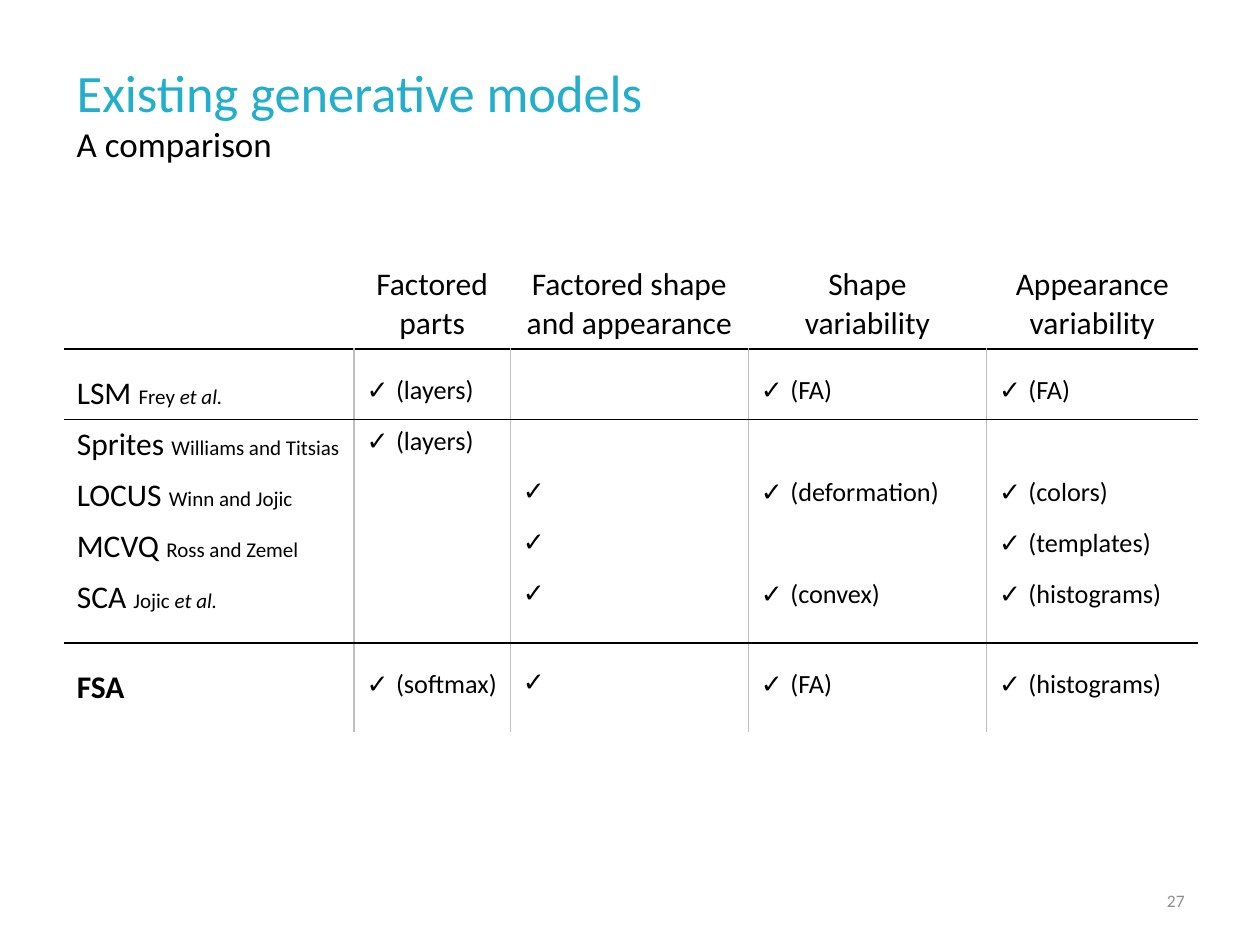
from lxml import etree
from pptx import Presentation
from pptx.dml.color import RGBColor
from pptx.enum import text as t
from pptx.oxml import ns
from pptx.util import Inches, Pt

TEAL = RGBColor(0x23, 0xAF, 0xCB)
BLACK = RGBColor(0, 0, 0)
GREY = RGBColor(0x8C, 0x8C, 0x8C)
RULE_GREY = RGBColor(0xBF, 0xBF, 0xBF)
WHITE = RGBColor(0xFF, 0xFF, 0xFF)

COLUMN_WIDTHS = [2.3, 1.24, 1.89, 1.89, 1.68]
ROW_HEIGHTS = [0.71, 0.56, 0.405, 0.405, 0.405, 0.56, 0.71]
# Top and bottom cell margins that differ from the usual 0.05
ROW_MARGINS = {1: (0.2, 0.05), 5: (0.05, 0.2), 6: (0.2, 0.2)}
RULED_EDGES = {1, 2, 6}  # black rules lie above these rows

HEADERS = ["", "Factored\nparts", "Factored shape and appearance",
           "Shape\nvariability", "Appearance variability"]
# Model, authors, "et al." or nothing, then one mark per column
# (None: no mark, "": tick alone, otherwise tick with a note)
MODELS = [
    ("LSM", "Frey", "et al.", ["layers", None, "FA", "FA"]),
    ("Sprites", "Williams and Titsias", "", ["layers", None, None, None]),
    ("LOCUS", "Winn and Jojic", "", [None, "", "deformation", "colors"]),
    ("MCVQ", "Ross and Zemel", "", [None, "", None, "templates"]),
    ("SCA", "Jojic", "et al.", [None, "", "convex", "histograms"]),
    ("FSA", "", "", ["softmax", "", "FA", "histograms"]),
]


def add_run(paragraph, wording, size, color=BLACK, font="Calibri", bold=False, italic=False):
    run = paragraph.add_run()
    run.text = wording
    run.font.name = font
    run.font.size = Pt(size)
    run.font.color.rgb = color
    run.font.bold = bold
    run.font.italic = italic


def add_text(slide, box, wording, size, color, anchor=t.MSO_ANCHOR.MIDDLE,
             align=t.PP_ALIGN.LEFT):
    frame = slide.shapes.add_textbox(*map(Inches, box)).text_frame
    frame.word_wrap = True
    frame.vertical_anchor = anchor
    paragraph = frame.paragraphs[0]
    paragraph.alignment = align
    add_run(paragraph, wording, size, color)


def set_borders(cell, colors):
    """Draw the left, right, top and bottom borders in the given colours."""
    properties = cell._tc.get_or_add_tcPr()
    for index, (side, color) in enumerate(zip("LRTB", colors)):
        line = etree.Element(ns.qn(f"a:ln{side}"), w=str(Pt(1)))
        if color is None:
            etree.SubElement(line, ns.qn("a:noFill"))
        else:
            fill = etree.SubElement(line, ns.qn("a:solidFill"))
            etree.SubElement(fill, ns.qn("a:srgbClr"), val=str(color))
        properties.insert(index, line)


def style_cell(cell, row, column):
    cell.fill.solid()
    cell.fill.fore_color.rgb = WHITE
    top, bottom = ROW_MARGINS.get(row, (0.05, 0.05))
    cell.margin_top, cell.margin_bottom = Inches(top), Inches(bottom)
    last_column = len(COLUMN_WIDTHS) - 1
    set_borders(cell, [
        RULE_GREY if row > 0 and column > 0 else None,
        RULE_GREY if row > 0 and column < last_column else None,
        BLACK if row in RULED_EDGES else None,
        BLACK if row + 1 in RULED_EDGES else None,
    ])


def fill_header(cell, wording):
    cell.vertical_anchor = t.MSO_ANCHOR.MIDDLE
    cell.text_frame.text = wording
    for paragraph in cell.text_frame.paragraphs:
        paragraph.alignment = t.PP_ALIGN.CENTER
        for run in paragraph.runs:
            run.font.name = "Calibri"
            run.font.size = Pt(18)
            run.font.color.rgb = BLACK


def fill_model(cell, name, authors, others):
    paragraph = cell.text_frame.paragraphs[0]
    if not authors:
        add_run(paragraph, name, 18, bold=True)
        return
    add_run(paragraph, name + " ", 18)
    add_run(paragraph, authors + (" " if others else ""), 12)
    if others:
        add_run(paragraph, others, 12, italic=True)


def fill_mark(cell, note):
    if note is None:
        return
    paragraph = cell.text_frame.paragraphs[0]
    add_run(paragraph, "✓ " if note else "✓", 15, font="Arial")
    if note:
        add_run(paragraph, f"({note})", 15)


def add_comparison(slide, left, top):
    frame = slide.shapes.add_table(
        len(ROW_HEIGHTS), len(COLUMN_WIDTHS), Inches(left), Inches(top),
        Inches(sum(COLUMN_WIDTHS)), Inches(sum(ROW_HEIGHTS)))
    table = frame.table
    table.first_row = table.horz_banding = False
    for column, width in zip(table.columns, COLUMN_WIDTHS):
        column.width = Inches(width)
    for row, height in zip(table.rows, ROW_HEIGHTS):
        row.height = Inches(height)

    for row in range(len(ROW_HEIGHTS)):
        for column in range(len(COLUMN_WIDTHS)):
            style_cell(table.cell(row, column), row, column)
    for column, wording in enumerate(HEADERS):
        fill_header(table.cell(0, column), wording)
    for row, (name, authors, others, notes) in enumerate(MODELS, start=1):
        fill_model(table.cell(row, 0), name, authors, others)
        for column, note in enumerate(notes, start=1):
            fill_mark(table.cell(row, column), note)


def add_heading(slide, left, top, width):
    add_text(slide, (left, top, width, 0.85), "Existing generative models", 30, TEAL)
    add_text(slide, (left, top + 0.62, width, 0.55), "A comparison", 20, BLACK,
             anchor=t.MSO_ANCHOR.TOP)


def main():
    presentation = Presentation()
    presentation.slide_width, presentation.slide_height = Inches(10), Inches(7.5)
    slide = presentation.slides.add_slide(presentation.slide_layouts[6])
    add_heading(slide, 0.51, 0.3, 8.98)
    add_comparison(slide, 0.51, 2.06)
    # Slide number
    add_text(slide, (7.17, 6.95, 2.33, 0.4), "27", 10, GREY, align=t.PP_ALIGN.RIGHT)
    presentation.save("out.pptx")


if __name__ == "__main__":
    main()
